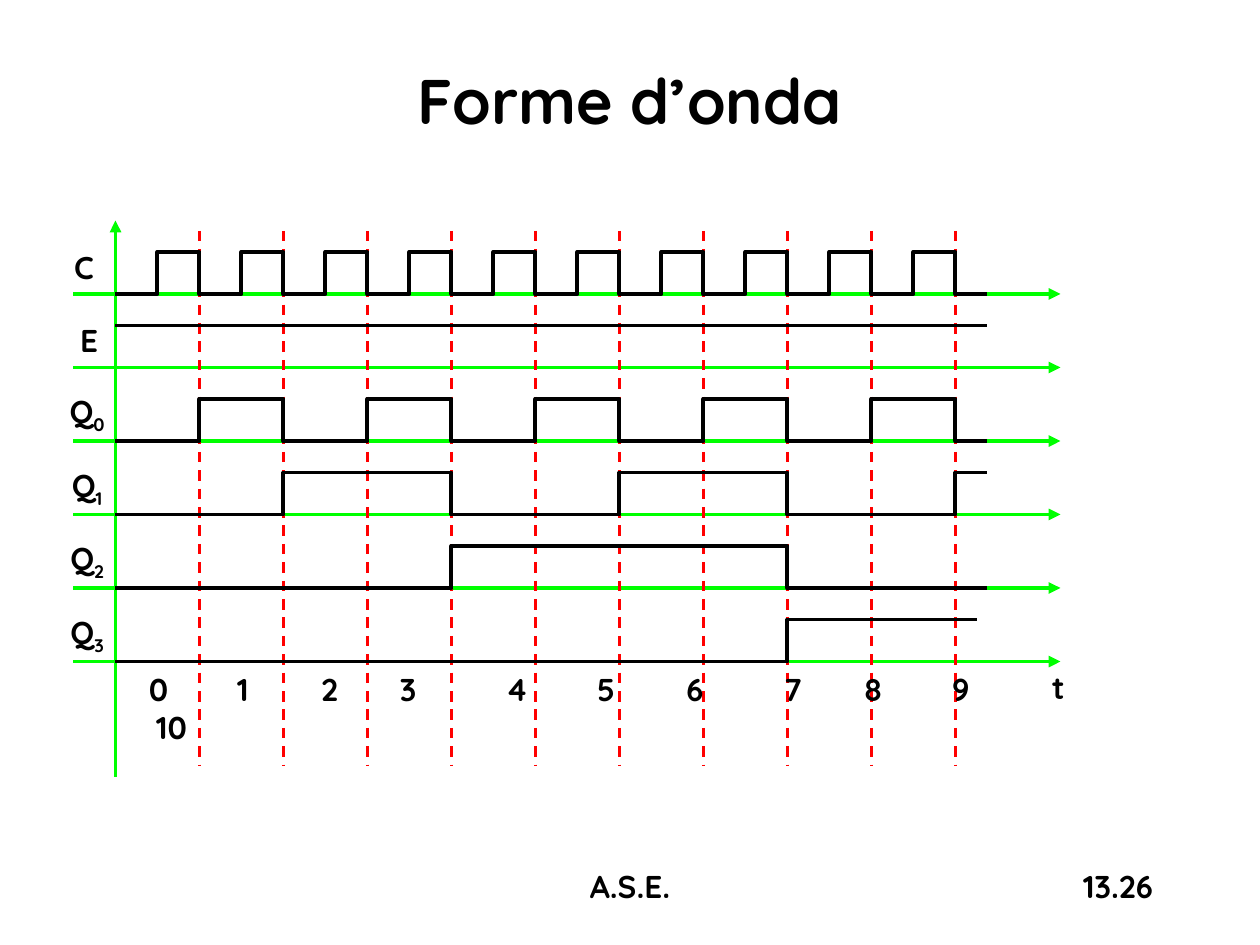
import dataclasses

import lxml.etree
import pptx
import pptx.dml.color
import pptx.enum.dml
import pptx.enum.shapes
import pptx.enum.text
import pptx.oxml.ns
import pptx.util

EMU_PER_PX = 7620  # 120 px to the inch
ALIGN = pptx.enum.text.PP_ALIGN
ANCHOR = pptx.enum.text.MSO_ANCHOR


@dataclasses.dataclass(frozen=True)
class Theme:
    font: str = "Quicksand"
    title_size: int = 36
    text_size: int = 18
    ink: str = "000000"
    axis: str = "00FF00"
    marker: str = "FF0000"
    signal_width: float = 2.25
    marker_width: float = 1.5


THEME = Theme()
DIAGRAM_BOX = (70, 210, 940, 530)
ORIGIN = 40         # time zero, from the left of the diagram
ROW_PITCH = 70
FIRST_BASELINE = 70
AMPLITUDE = 40
HALF_CLOCK = 40
SIGNAL_LENGTH = 830
PERIODS = 10
# name, subscript, label left and width, half period (None: always high), length
SIGNALS = [
    ("C", "", -20, 60, HALF_CLOCK, SIGNAL_LENGTH),
    ("E", "", -10, 50, None, SIGNAL_LENGTH),
    ("Q", "0", -30, 86, HALF_CLOCK * 2, SIGNAL_LENGTH),
    ("Q", "1", -30, 86, HALF_CLOCK * 4, SIGNAL_LENGTH),
    ("Q", "2", -30, 86, HALF_CLOCK * 8, SIGNAL_LENGTH),
    ("Q", "3", -30, 86, HALF_CLOCK * 16, SIGNAL_LENGTH - 10),
]
COUNT_TABS = [84, 164, 239, 340, 427, 512, 605, 681, 765]


def px(length):
    return pptx.util.Emu(length * EMU_PER_PX)


def rgb(color):
    return pptx.dml.color.RGBColor.from_string(color)


def add_run(paragraph, text, size=THEME.text_size, subscript=False):
    run = paragraph.add_run()
    run.text = text
    run.font.name = THEME.font
    run.font.size = pptx.util.Pt(size)
    run.font.bold = True
    run.font.color.rgb = rgb(THEME.ink)
    if subscript:
        run.font._element.set("baseline", "-25000")


def add_text(slide, box, text, subscript="", align=ALIGN.CENTER, anchor=ANCHOR.TOP):
    shape = slide.shapes.add_textbox(*map(px, box))
    frame = shape.text_frame
    frame.word_wrap = True
    frame.vertical_anchor = anchor
    paragraph = frame.paragraphs[0]
    paragraph.alignment = align
    add_run(paragraph, text)
    if subscript:
        add_run(paragraph, subscript, subscript=True)
    return shape


def add_line(slide, start, end, color, width=THEME.signal_width, dashed=False, arrow=False):
    connector = slide.shapes.add_connector(
        pptx.enum.shapes.MSO_CONNECTOR.STRAIGHT, *map(px, (*start, *end)))
    connector.line.color.rgb = rgb(color)
    connector.line.width = pptx.util.Pt(width)
    if dashed:
        connector.line.dash_style = pptx.enum.dml.MSO_LINE.DASH
    properties = connector._element.spPr
    if arrow:
        line = properties.find(pptx.oxml.ns.qn("a:ln"))
        lxml.etree.SubElement(line, pptx.oxml.ns.qn("a:tailEnd"), type="triangle")
    lxml.etree.SubElement(properties, pptx.oxml.ns.qn("a:effectLst"))


def add_square_wave(slide, left, baseline, half_period, length):
    """Draw a signal that starts low and toggles after every half period."""
    points = []
    level = baseline
    for time in range(half_period, length, half_period):
        points.append((left + time, level))
        level = 2 * baseline - AMPLITUDE - level
        points.append((left + time, level))
    points.append((left + length, level))
    builder = slide.shapes.build_freeform(px(left), px(baseline))
    builder.add_line_segments([(px(x), px(y)) for x, y in points], close=False)
    shape = builder.convert_to_shape()
    shape.shadow.inherit = False
    shape.fill.background()
    shape.line.color.rgb = rgb(THEME.ink)
    shape.line.width = pptx.util.Pt(THEME.signal_width)


def add_counts(slide, box):
    """Number the clock periods on tab stops; the last number takes a second line."""
    shape = add_text(slide, box, "\t".join(map(str, range(PERIODS))),
                     align=ALIGN.LEFT, anchor=ANCHOR.MIDDLE)
    frame = shape.text_frame
    properties = frame.paragraphs[0]._p.get_or_add_pPr()
    tabs = lxml.etree.SubElement(properties, pptx.oxml.ns.qn("a:tabLst"))
    for position in COUNT_TABS:
        lxml.etree.SubElement(tabs, pptx.oxml.ns.qn("a:tab"), pos=str(px(position)), algn="l")
    last = frame.add_paragraph()
    last._p.get_or_add_pPr().set("marL", str(px(7)))
    add_run(last, str(PERIODS))


def add_timing_diagram(slide, box):
    left, top, width, height = box
    origin = left + ORIGIN
    baselines = [top + FIRST_BASELINE + ROW_PITCH * row for row in range(len(SIGNALS))]

    add_line(slide, (origin, top + height), (origin, top), THEME.axis, arrow=True)
    for baseline in baselines:
        add_line(slide, (left, baseline), (left + width, baseline), THEME.axis, arrow=True)
    for period in range(1, PERIODS + 1):
        x = origin + 2 * HALF_CLOCK * period
        add_line(slide, (x, top + 10), (x, top + height - 10), THEME.marker,
                 width=THEME.marker_width, dashed=True)

    for baseline, signal in zip(baselines, SIGNALS):
        name, subscript, label_left, label_width, half_period, length = signal
        add_text(slide, (left + label_left, baseline - 50, label_width, 48), name,
                 subscript=subscript, anchor=ANCHOR.MIDDLE)
        if half_period is None:
            high = baseline - AMPLITUDE
            add_line(slide, (origin, high), (origin + length, high), THEME.ink)
        else:
            add_square_wave(slide, origin, baseline, half_period, length)

    add_counts(slide, (origin + 20, baselines[-1] + 20, 850, 48))
    add_text(slide, (left + width - 20, baselines[-1], 42, 48), "t", align=ALIGN.LEFT)


def add_title(slide, box, text):
    title = slide.shapes.title
    title.left, title.top, title.width, title.height = map(px, box)
    title.text_frame.vertical_anchor = ANCHOR.MIDDLE
    paragraph = title.text_frame.paragraphs[0]
    paragraph.alignment = ALIGN.CENTER
    add_run(paragraph, text, size=THEME.title_size)


def add_footer(slide, box):
    left, top, width, height = box
    add_text(slide, (left, top, 380, height), "A.S.E.")
    add_text(slide, (left + width - 250, top, 250, height), "13.26", align=ALIGN.RIGHT)


def main():
    presentation = pptx.Presentation()
    presentation.slide_width, presentation.slide_height = px(1200), px(900)
    slide = presentation.slides.add_slide(presentation.slide_layouts.get_by_name("Title Only"))
    add_title(slide, (20, 20, 1160, 150), "Forme d’onda")
    add_timing_diagram(slide, DIAGRAM_BOX)
    add_footer(slide, (410, 820, 700, 60))
    presentation.save("out.pptx")


if __name__ == "__main__":
    main()
